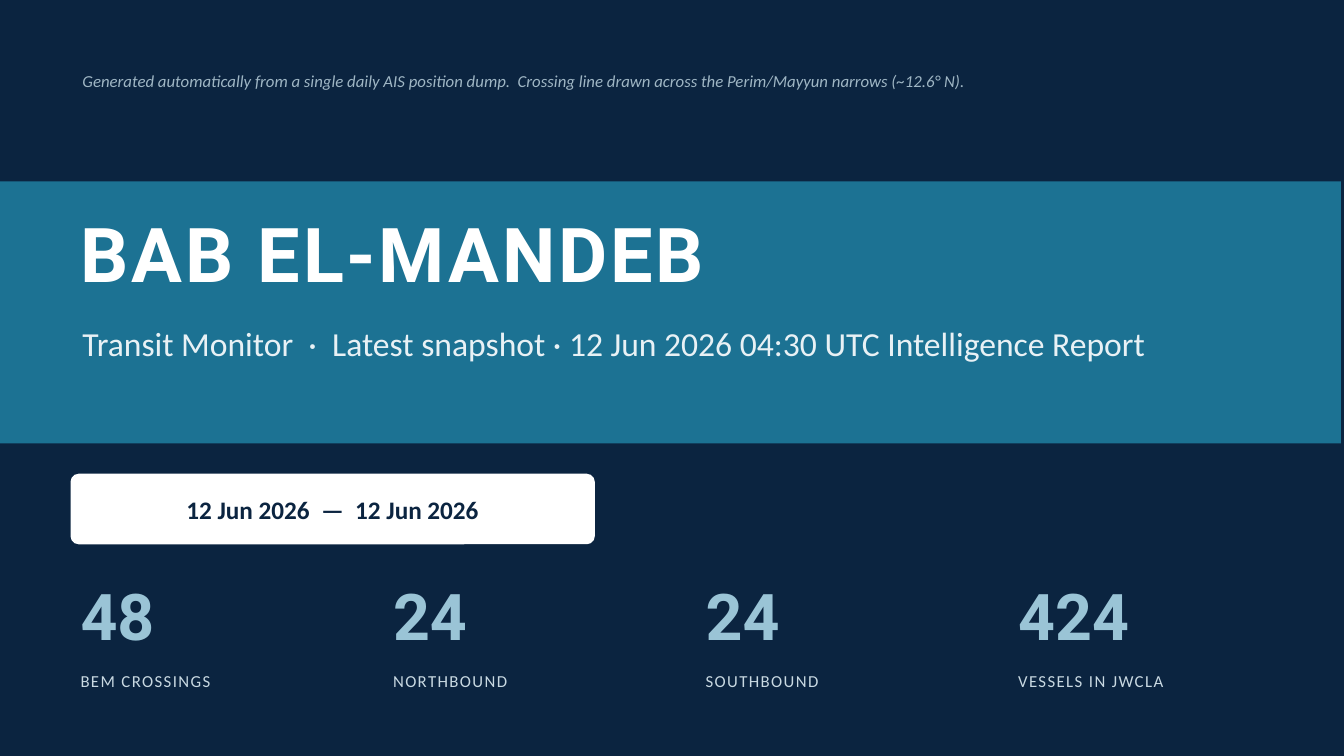
from pptx import Presentation
from pptx.dml.color import RGBColor
from pptx.enum.shapes import MSO_SHAPE as Shape
from pptx.enum.text import MSO_ANCHOR as Anchor, PP_ALIGN as Align
from pptx.util import Inches, Pt

WIDTH, HEIGHT = 13.33, 7.5
HEAD, BODY = "Roboto", "Calibri"
HEX = {
    "navy": "0B2440", "teal": "1C7293", "white": "FFFFFF", "ice": "E8F1F5",
    "sky": "9AC4D6", "mist": "C9D9E2", "haze": "9FB6C4",
}
STATS = [
    ("48", "BEM CROSSINGS"),
    ("24", "NORTHBOUND"),
    ("24", "SOUTHBOUND"),
    ("424", "VESSELS IN JWCLA"),
]


def color(name):
    """Return the named palette colour."""
    return RGBColor.from_string(HEX[name])


def write(shape, text, size, face, tint, bold=False, slant=False, track=0):
    """Fill a shape with one styled, vertically centred line."""
    frame = shape.text_frame
    frame.word_wrap = True
    frame.vertical_anchor = Anchor.MIDDLE
    frame.text = text
    run = frame.paragraphs[0].runs[0]
    font = run.font
    font.size, font.name = Pt(size), face
    font.bold, font.italic = bold, slant
    font.color.rgb = color(tint)
    if track:
        font._element.set("spc", str(track * 100))


def label(slide, box, *args, **style):
    """Add a text box holding one styled line."""
    write(slide.shapes.add_textbox(*map(Inches, box)), *args, **style)


def panel(slide, kind, box, tint):
    """Add a flat, filled shape without outline or shadow."""
    shape = slide.shapes.add_shape(kind, *map(Inches, box))
    shape.shadow.inherit = False
    shape.fill.solid()
    shape.fill.fore_color.rgb = color(tint)
    shape.line.fill.background()
    return shape


def banner(slide, left, top, width, height):
    """Draw the title band with its heading and subtitle."""
    panel(slide, Shape.RECTANGLE, (left, top, width, height), "teal")
    label(slide, (left + 0.7, top + 0.15, width - 1.4, 1.1),
          "BAB EL-MANDEB", 54, HEAD, "white", bold=True, track=2)
    label(slide, (left + 0.72, top + 1.25, width - 1.4, 0.7),
          "Transit Monitor  ·  Latest snapshot · 12 Jun 2026 04:30 UTC "
          "Intelligence Report", 24, BODY, "ice")


def period(slide, left, top, width, height):
    """Draw the rounded plate with the date range."""
    plate = panel(slide, Shape.ROUNDED_RECTANGLE,
                  (left, top, width, height), "white")
    plate.adjustments[0] = 0.08 / height
    write(plate, "12 Jun 2026  —  12 Jun 2026", 18, BODY, "navy", bold=True)
    plate.text_frame.paragraphs[0].alignment = Align.CENTER


def stats(slide, left, top, width, height):
    """Lay out the key figures in equal columns."""
    gap = 0.25
    step = (width + gap) / len(STATS)
    split = height * 9 / 13
    for col, (value, name) in enumerate(STATS):
        x = left + col * step
        label(slide, (x, top, step - gap, split),
              value, 46, HEAD, "sky", bold=True)
        label(slide, (x, top + split, step - gap, height - split),
              name, 12, BODY, "mist", track=1)


def cover(deck):
    """Build the cover slide."""
    slide = deck.slides.add_slide(deck.slide_layouts[6])
    slide.background.fill.solid()
    slide.background.fill.fore_color.rgb = color("navy")
    banner(slide, 0, 1.8, 13.3, 2.6)
    period(slide, 0.7, 4.7, 5.2, 0.7)
    stats(slide, 0.7, 5.65, 12.15, 1.3)
    label(slide, (0.72, 0.55, 11.9, 0.5),
          "Generated automatically from a single daily AIS position dump.  "
          "Crossing line drawn across the Perim/Mayyun narrows (~12.6° N).",
          12, BODY, "haze", slant=True)


def main():
    """Create and save the deck."""
    deck = Presentation()
    deck.slide_width, deck.slide_height = Inches(WIDTH), Inches(HEIGHT)
    cover(deck)
    deck.save("out.pptx")


if __name__ == "__main__":
    main()
